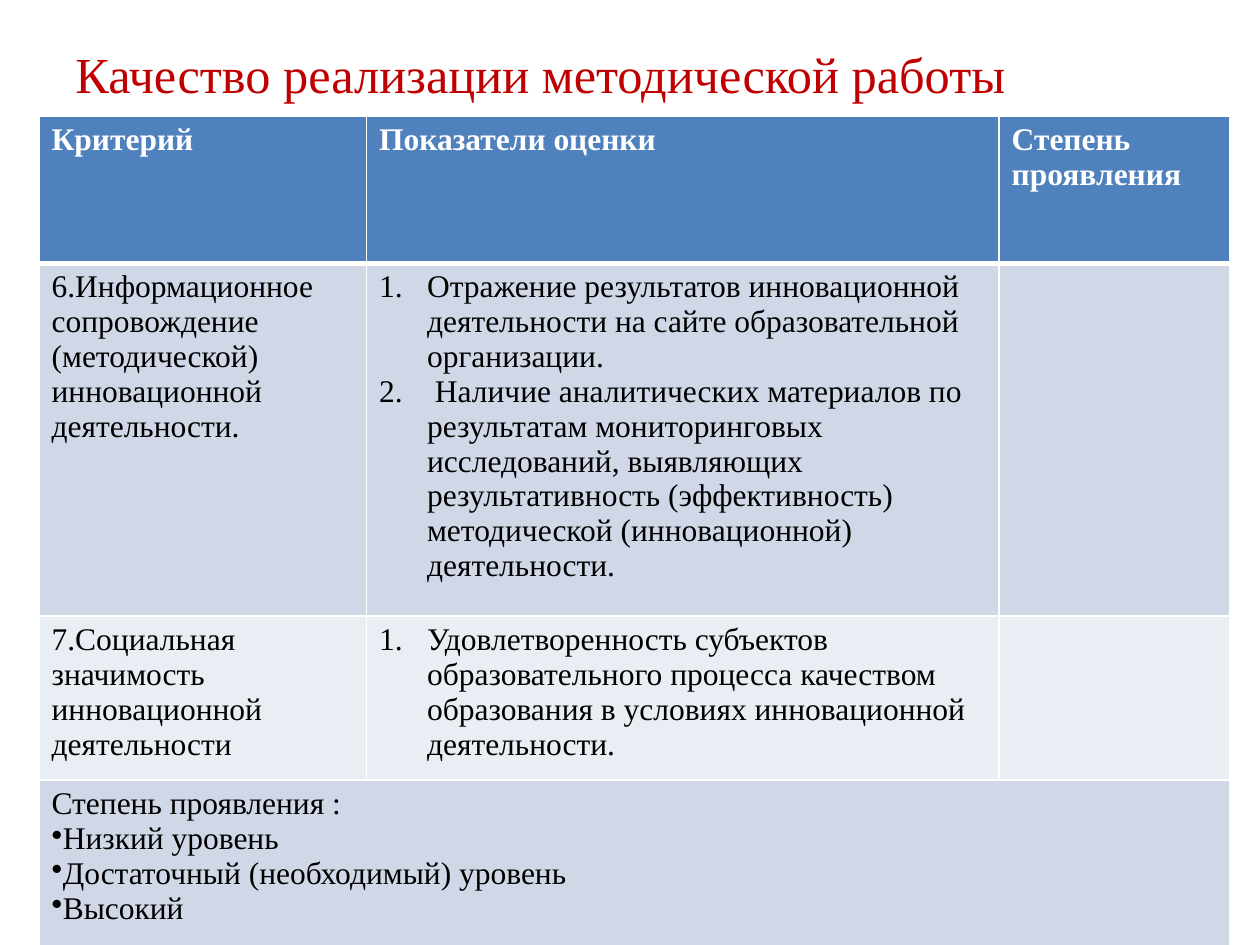
from pptx import Presentation
from pptx.util import Inches, Pt
from pptx.dml.color import RGBColor
from pptx.enum.text import MSO_ANCHOR, PP_ALIGN
from lxml.etree import SubElement
from pptx.oxml.ns import qn

FONT = "Times New Roman"
HUES = {"title": "C00000", "head": "4F81BD", "dark": "D0D8E8",
        "light": "E9EDF4", "white": "FFFFFF", "black": "000000"}
COLS = [2.6, 5.02, 1.83]
ROWS = [1.17, 2.66, 1.23, 1.52]
FILLS = ["head", "dark", "light", "dark"]

# Each cell is a list of (mark, text); the mark is "", "1." or "•".
CELLS = [
    [[("", "Критерий")], [("", "Показатели оценки")], [("", "Степень проявления")]],
    [[("", "6.Информационное сопровождение (методической) инновационной деятельности.")],
     [("1.", "Отражение результатов инновационной деятельности на сайте "
             "образовательной организации."),
      ("1.", " Наличие аналитических материалов по результатам мониторинговых "
             "исследований, выявляющих результативность (эффективность) "
             "методической (инновационной) деятельности.")],
     []],
    [[("", "7.Социальная значимость инновационной деятельности")],
     [("1.", "Удовлетворенность субъектов образовательного процесса качеством "
             "образования в условиях инновационной деятельности.")],
     []],
    [[("", "Степень проявления :"), ("•", "Низкий уровень"),
      ("•", "Достаточный (необходимый) уровень"), ("•", "Высокий")], [], []],
]


def style(para, size, hue, bold=False):
    font = para.font
    font.name, font.size, font.bold = FONT, Pt(size), bold
    font.color.rgb = RGBColor.from_string(HUES[hue])


def edge(cell, side, width):
    """Draw a white border on one side (L, R, T or B) of a cell."""
    line = SubElement(cell._tc.get_or_add_tcPr(), qn(f"a:ln{side}"), w=str(Pt(width)))
    fill = SubElement(line, qn("a:solidFill"))
    SubElement(fill, qn("a:srgbClr"), val=HUES["white"])


deck = Presentation()
deck.slide_width, deck.slide_height = Inches(10), Inches(7.5)
slide = deck.slides.add_slide(deck.slide_layouts[6])

# Title
box = slide.shapes.add_textbox(Inches(0.5), Inches(0.3), Inches(9), Inches(0.56))
frame = box.text_frame
frame.word_wrap = True
frame.vertical_anchor = MSO_ANCHOR.MIDDLE
title = frame.paragraphs[0]
title.text = "Качество реализации методической работы"
title.alignment = PP_ALIGN.JUSTIFY
style(title, 28.8, "title")

# Table of criteria
table = slide.shapes.add_table(len(ROWS), len(COLS), Inches(0.31), Inches(0.92),
                               Inches(sum(COLS)), Inches(sum(ROWS))).table
for col, width in zip(table.columns, COLS):
    col.width = Inches(width)
for row, height in zip(table.rows, ROWS):
    row.height = Inches(height)
table.cell(3, 0).merge(table.cell(3, 2))

for r, row in enumerate(CELLS):
    for c, items in enumerate(row):
        cell = table.cell(r, c)
        for side in "LRTB":
            thick = (r, side) in [(0, "B"), (1, "T")]
            edge(cell, side, 3 if thick else 1)
        cell.fill.solid()
        cell.fill.fore_color.rgb = RGBColor.from_string(HUES[FILLS[r]])
        for i, (mark, text) in enumerate(items):
            body = cell.text_frame
            para = body.paragraphs[0] if i == 0 else body.add_paragraph()
            para.text = text
            style(para, 18, "black" if r else "white", bold=r == 0)
            props = para._p.get_or_add_pPr()
            if mark == "1.":
                props.set("marL", str(Inches(0.38)))
                props.set("indent", str(-Inches(0.38)))
                bullet = SubElement(props, qn("a:buAutoNum"), type="arabicPeriod")
            elif mark:
                bullet = SubElement(props, qn("a:buChar"), char=mark)
            if mark:
                props.find(qn("a:defRPr")).addprevious(bullet)

deck.save("out.pptx")
